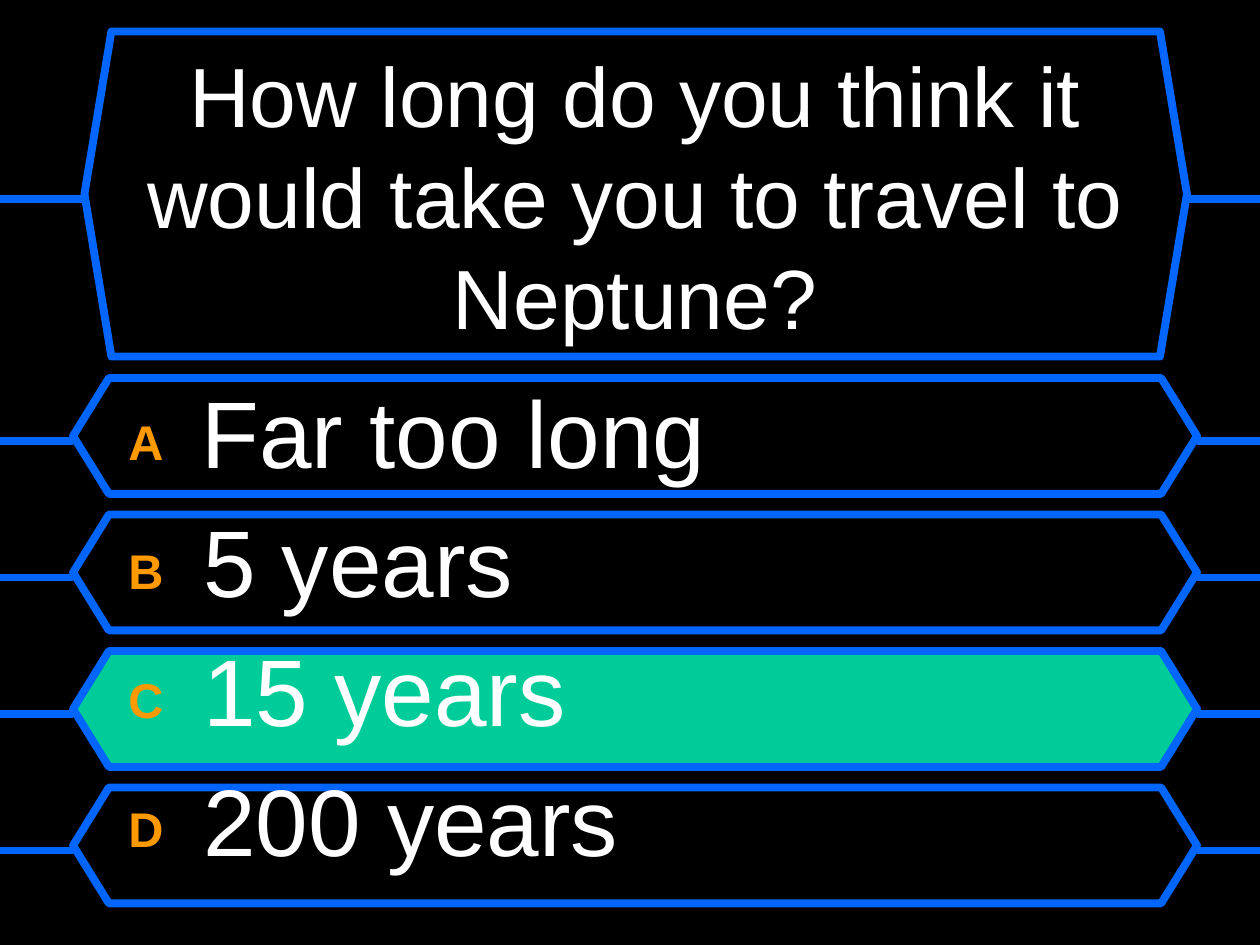
import pptx
import pptx.dml.color
import pptx.enum.shapes
import pptx.enum.text
import pptx.util
from lxml import etree
from pptx.oxml.ns import qn
from pptx.util import Inches

BLACK, WHITE, BLUE, GREEN, ORANGE = "000000", "FFFFFF", "0066FF", "00CC99", "FF9900"
PAGE_WIDTH = 10
ANSWERS = ["Far too long", "5 years", "15 years", "200 years"]
CORRECT = 2


def color(value):
    """Return the colour for a hex string."""
    return pptx.dml.color.RGBColor.from_string(value)


def add_span(para, text, size=48, fill=WHITE, bold=False, raised=0):
    """Add formatted text to a paragraph, raised by a percentage."""
    span = para.add_run()
    span.text = text
    span.font.name = "Arial"
    span.font.size = pptx.util.Pt(size)
    span.font.bold = bold
    span.font.color.rgb = color(fill)
    if raised:
        span.font._element.set("baseline", str(raised * 1000))


def add_text_box(page, left, top, width, height, anchor):
    """Add a wrapping text box and return its text frame."""
    box = page.shapes.add_textbox(*map(Inches, (left, top, width, height)))
    frame = box.text_frame
    frame.word_wrap = True
    frame.vertical_anchor = anchor
    return frame


def add_side_line(page, start, end, height):
    """Add a level line between two horizontal positions."""
    line = page.shapes.add_connector(
        pptx.enum.shapes.MSO_CONNECTOR.STRAIGHT,
        Inches(start), Inches(height), Inches(end), Inches(height))
    line.line.color.rgb = color(BLUE)
    line.line.width = pptx.util.Pt(4.5)
    etree.SubElement(line._element.spPr, qn("a:effectLst"))


def add_panel(page, left, top, width, height, point, line_offset, fill=BLACK):
    """Add a hexagon joined to both page edges by lines."""
    panel = page.shapes.add_shape(
        pptx.enum.shapes.MSO_SHAPE.HEXAGON,
        *map(Inches, (left, top, width, height)))
    panel.adjustments[0] = point
    panel.shadow.inherit = False
    panel.fill.solid()
    panel.fill.fore_color.rgb = color(fill)
    panel.line.color.rgb = color(BLUE)
    panel.line.width = pptx.util.Pt(4.5)
    add_side_line(page, left, 0, top + line_offset)
    add_side_line(page, PAGE_WIDTH, left + width, top + line_offset)


def add_question(page, left, top, width, height, text):
    """Add the question panel with its centred text."""
    add_panel(page, left, top, width, height, point=0.083, line_offset=1.33)
    frame = add_text_box(page, left + 0.16, top + 0.17, width - 0.33, height - 0.33,
                         pptx.enum.text.MSO_ANCHOR.MIDDLE)
    para = frame.paragraphs[0]
    para.alignment = pptx.enum.text.PP_ALIGN.CENTER
    add_span(para, text)


def add_answers(page, left, top, width, height, answers, correct):
    """Add the answer panels and the lettered list over them."""
    panel_height = 0.92
    pitch = (height - panel_height) / (len(answers) - 1)
    for index in range(len(answers)):
        add_panel(page, left, top + index * pitch, width, panel_height, point=0.309,
                  line_offset=0.5, fill=GREEN if index == correct else BLACK)
    frame = add_text_box(page, left + 0.34, top - 0.08, width - 0.59, height + 0.16,
                         pptx.enum.text.MSO_ANCHOR.TOP)
    for index, answer in enumerate(answers):
        para = frame.add_paragraph() if index else frame.paragraphs[0]
        properties = para._p.get_or_add_pPr()
        properties.set("marL", str(Inches(0.38)))
        properties.set("indent", str(Inches(-0.38)))
        if index:
            para.space_before = pptx.util.Pt(9)
        add_span(para, "ABCD"[index] + " ", fill=ORANGE, bold=True, raised=10)
        add_span(para, " ", size=54, fill=BLACK)
        add_span(para, answer, size=54)


def main():
    """Build the quiz slide and save it."""
    deck = pptx.Presentation()
    deck.slide_width, deck.slide_height = Inches(PAGE_WIDTH), Inches(7.5)
    page = deck.slides.add_slide(deck.slide_layouts[6])
    page.background.fill.solid()
    page.background.fill.fore_color.rgb = color(BLACK)
    add_question(page, 0.67, 0.25, 8.75, 2.58,
                 "How long do you think it would take you to travel to Neptune?")
    add_answers(page, 0.58, 3, 8.92, 4.17, ANSWERS, CORRECT)
    deck.save("out.pptx")


if __name__ == "__main__":
    main()
